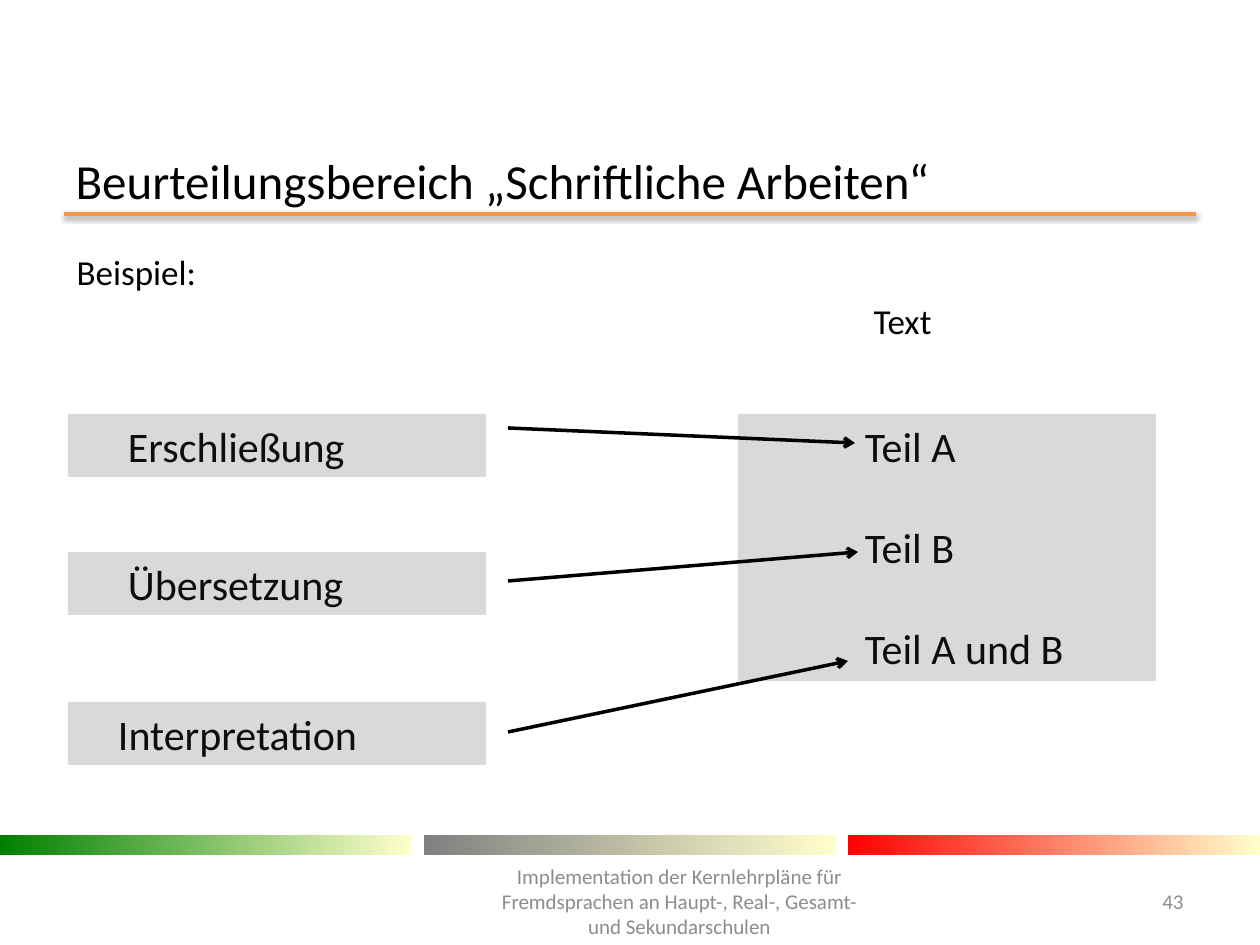
from lxml import etree
from pptx import Presentation
from pptx import util as u
from pptx.dml.color import RGBColor
from pptx.enum import shapes, text
from pptx.oxml import ns

SCALE = 914400 / 126
FONT = "Calibri"
BLACK = RGBColor(0x00, 0x00, 0x00)
WHITE = RGBColor(0xFF, 0xFF, 0xFF)
INK = RGBColor(0x0D, 0x0D, 0x0D)
MUTED = RGBColor(0x8C, 0x8C, 0x8C)
PANEL = RGBColor(0xD9, 0xD9, 0xD9)
ORANGE = RGBColor(0xF7, 0x96, 0x46)
GREEN = RGBColor(0x00, 0x80, 0x00)
GRAY = RGBColor(0x80, 0x80, 0x80)
RED = RGBColor(0xFF, 0x00, 0x00)
CREAM = RGBColor(0xFF, 0xFF, 0xCC)


def px(length):
    """Turn px into EMU."""
    return u.Emu(round(length * SCALE))


def place(shape, box):
    """Move a shape to a box of left, top, width, height."""
    shape.left, shape.top, shape.width, shape.height = map(px, box)


def write(shape, lines, size, color, align=text.PP_ALIGN.LEFT,
          anchor=text.MSO_ANCHOR.TOP, gap=0):
    """Fill a shape with formatted paragraphs, spaced by gap points."""
    frame = shape.text_frame
    frame.text = "\n".join(lines)
    frame.word_wrap = True
    frame.auto_size = text.MSO_AUTO_SIZE.NONE
    frame.vertical_anchor = anchor
    for number, paragraph in enumerate(frame.paragraphs):
        paragraph.alignment = align
        paragraph.space_before = u.Pt(gap if number else 0)
        for run in paragraph.runs:
            run.font.name = FONT
            run.font.size = u.Pt(size)
            run.font.color.rgb = color


def add_rectangle(slide, box):
    """Add a rectangle without outline or shadow."""
    rectangle = slide.shapes.add_shape(
        shapes.MSO_SHAPE.RECTANGLE, *map(px, box))
    rectangle.shadow.inherit = False
    rectangle.line.fill.background()
    return rectangle


def add_line(slide, start, end, color):
    """Add a straight line and return it with its empty effect list."""
    line = slide.shapes.add_connector(
        shapes.MSO_CONNECTOR.STRAIGHT, *map(px, start + end))
    line.line.color.rgb = color
    line.line.width = u.Pt(2)
    properties = line._element.spPr
    return line, etree.SubElement(properties, ns.qn("a:effectLst"))


def add_heading(slide, box):
    """Place the title above its shadowed rule."""
    left, top, width, height = box
    title = slide.shapes.title
    place(title, (left, top, width, height))
    write(title, ["Beurteilungsbereich „Schriftliche Arbeiten“"], 28, BLACK,
          anchor=text.MSO_ANCHOR.MIDDLE)
    rule_y = top + height + 10
    _, effects = add_line(slide, (left + 1, rule_y),
                          (left + width - 1, rule_y), ORANGE)
    shadow = etree.SubElement(
        effects, ns.qn("a:outerShdw"), blurRad=str(u.Pt(3.1)),
        dist=str(u.Pt(1.6)), dir="5400000", rotWithShape="0")
    tint = etree.SubElement(shadow, ns.qn("a:srgbClr"), val=str(BLACK))
    etree.SubElement(tint, ns.qn("a:alpha"), val="38000")


def add_introduction(slide, box):
    """Fill the body with the example label and the column heading."""
    body = slide.placeholders[1]
    place(body, box)
    body.fill.solid()
    body.fill.fore_color.rgb = WHITE
    write(body, ["Beispiel:", "Text"], 20, BLACK, gap=4)
    for paragraph, indent in zip(body.text_frame.paragraphs, (0, 797)):
        properties = paragraph._p.get_or_add_pPr()
        properties.set("marL", str(px(indent)))
        properties.set("indent", "0")
        etree.SubElement(properties, ns.qn("a:buNone"))


def add_panel(slide, box, lines, inset, gap=0):
    """Add a grey panel with indented text."""
    panel = add_rectangle(slide, box)
    panel.fill.solid()
    panel.fill.fore_color.rgb = PANEL
    write(panel, lines, 24, INK, gap=gap)
    panel.text_frame.margin_left = px(inset)


def add_assignment(slide, box):
    """Link each task panel on the left to its part of the text."""
    left, top, width, height = box
    panel_width = 418
    add_panel(slide, (left + width - panel_width, top, panel_width, height),
              ["Teil A", "Teil B", "Teil A und B"], 127, gap=29)
    tasks = [
        ("Erschließung", 60, 0, 14, (787, 29)),
        ("Übersetzung", 60, 138, 167, (790, 138)),
        ("Interpretation", 50, 288, 318, (780, 247)),
    ]
    for task, inset, offset, start_y, (end_x, end_y) in tasks:
        add_panel(slide, (left, top + offset, panel_width, 63), [task], inset)
        arrow, _ = add_line(slide, (left + 440, top + start_y),
                            (left + end_x, top + end_y), BLACK)
        outline = arrow.line._get_or_add_ln()
        etree.SubElement(outline, ns.qn("a:tailEnd"), type="arrow")


def add_footer(slide, box):
    """Add the three fading bars, the footer text and the page number."""
    left, top, width, _ = box
    bar_width = 412
    pitch = (width - bar_width) / 2
    for number, color in enumerate((GREEN, GRAY, RED)):
        bar = add_rectangle(
            slide, (left + number * pitch, top, bar_width, 20))
        bar.fill.gradient()
        bar.fill.gradient_angle = 0
        for stop, shade in zip(bar.fill.gradient_stops, (color, CREAM)):
            stop.color.rgb = shade
    notes = [
        ("Implementation der Kernlehrpläne für Fremdsprachen an Haupt-, "
         "Real-, Gesamt- und Sekundarschulen", 481, 397, text.PP_ALIGN.CENTER),
        ("43", 1116, 80, text.PP_ALIGN.RIGHT),
    ]
    for note, offset, note_width, align in notes:
        note_box = slide.shapes.add_textbox(
            *map(px, (left + offset, top + 41, note_width, 50)))
        write(note_box, [note], 12, MUTED, align, text.MSO_ANCHOR.MIDDLE)


def main():
    """Build and save the slide."""
    deck = Presentation()
    deck.slide_width, deck.slide_height = px(1260), px(945)
    slide = deck.slides.add_slide(deck.slide_layouts[1])
    add_heading(slide, (63, 155, 1134, 49))
    add_introduction(slide, (64, 244, 1134, 566))
    add_assignment(slide, (68, 414, 1088, 267))
    add_footer(slide, (0, 835, 1260, 110))
    deck.save("out.pptx")


if __name__ == "__main__":
    main()
